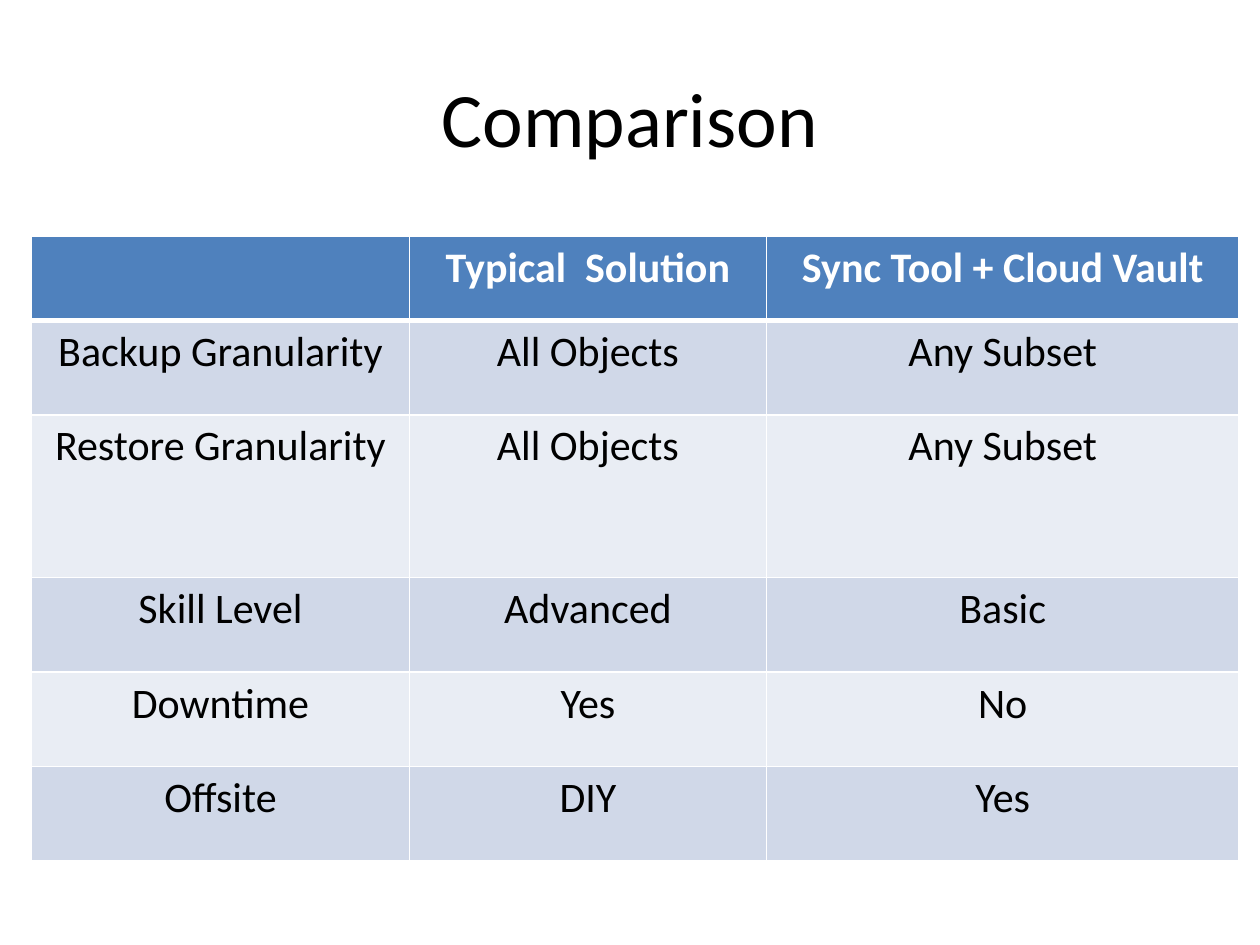
import pptx
import pptx.dml.color
import pptx.enum.text
import pptx.oxml.ns
import pptx.util
from lxml import etree

EMU_PER_PX = 9525
FONT = "Calibri"
BLACK = pptx.dml.color.RGBColor(0x00, 0x00, 0x00)
WHITE = pptx.dml.color.RGBColor(0xFF, 0xFF, 0xFF)
HEADER_BLUE = pptx.dml.color.RGBColor(0x4F, 0x81, 0xBD)
BAND_DARK = pptx.dml.color.RGBColor(0xD0, 0xD8, 0xE8)
BAND_LIGHT = pptx.dml.color.RGBColor(0xE9, 0xED, 0xF4)

COLUMN_WIDTHS = [288, 272, 360]
ROW_HEIGHTS = [64, 72, 124, 72, 72, 72]
ROWS = [
    ["", "Typical  Solution", "Sync Tool + Cloud Vault"],
    ["Backup Granularity", "All Objects", "Any Subset"],
    ["Restore Granularity", "All Objects", "Any Subset"],
    ["Skill Level", "Advanced", "Basic"],
    ["Downtime", "Yes", "No"],
    ["Offsite", "DIY", "Yes"],
]


def px(length):
    return pptx.util.Emu(length * EMU_PER_PX)


def format_text(frame, size, color, bold=False):
    for para in frame.paragraphs:
        para.alignment = pptx.enum.text.PP_ALIGN.CENTER
        para.font.size = pptx.util.Pt(size)
        for span in para.runs:
            span.font.name = FONT
            span.font.size = pptx.util.Pt(size)
            span.font.bold = bold
            span.font.color.rgb = color


def add_title(page, text):
    title = page.shapes.title
    title.left, title.top, title.width, title.height = map(px, (48, 29, 864, 120))
    title.text_frame.text = text
    title.text_frame.vertical_anchor = pptx.enum.text.MSO_ANCHOR.MIDDLE
    format_text(title.text_frame, 44, BLACK)


def set_borders(cell, widths):
    qn = pptx.oxml.ns.qn
    properties = cell._tc.get_or_add_tcPr()
    for side, width in widths.items():
        line = etree.SubElement(properties, qn(f"a:ln{side}"), w=str(pptx.util.Pt(width)))
        fill = etree.SubElement(line, qn("a:solidFill"))
        etree.SubElement(fill, qn("a:srgbClr"), val=str(WHITE))


def format_cell(cell, text, row_index):
    header = row_index == 0
    cell.text_frame.text = text
    format_text(cell.text_frame, 24, WHITE if header else BLACK, header)
    top = 3 if row_index == 1 else 1
    bottom = 3 if header else 1
    set_borders(cell, {"L": 1, "R": 1, "T": top, "B": bottom})
    band = BAND_DARK if row_index % 2 else BAND_LIGHT
    cell.fill.solid()
    cell.fill.fore_color.rgb = HEADER_BLUE if header else band


def add_comparison_table(page):
    frame = page.shapes.add_table(
        len(ROWS), len(COLUMN_WIDTHS), px(24), px(180),
        px(sum(COLUMN_WIDTHS)), px(sum(ROW_HEIGHTS)))
    table = frame.table
    for column, width in zip(table.columns, COLUMN_WIDTHS):
        column.width = px(width)
    for row_index, (row, height) in enumerate(zip(table.rows, ROW_HEIGHTS)):
        row.height = px(height)
        for cell, text in zip(row.cells, ROWS[row_index]):
            format_cell(cell, text, row_index)


def main():
    deck = pptx.Presentation()
    deck.slide_width = px(960)
    deck.slide_height = px(720)
    page = deck.slides.add_slide(deck.slide_layouts.get_by_name("Title Only"))
    add_title(page, "Comparison")
    add_comparison_table(page)
    deck.save("out.pptx")


if __name__ == "__main__":
    main()
